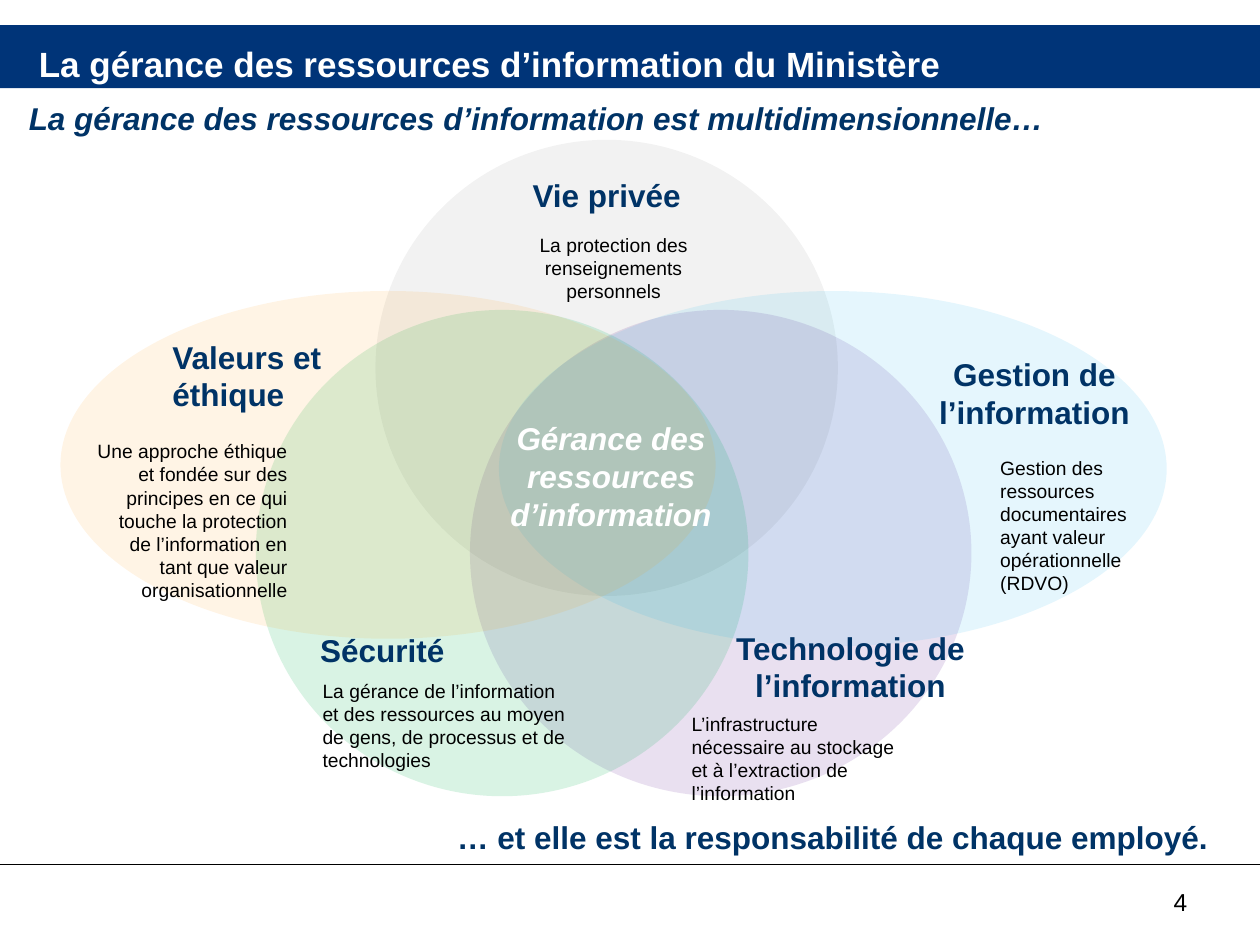
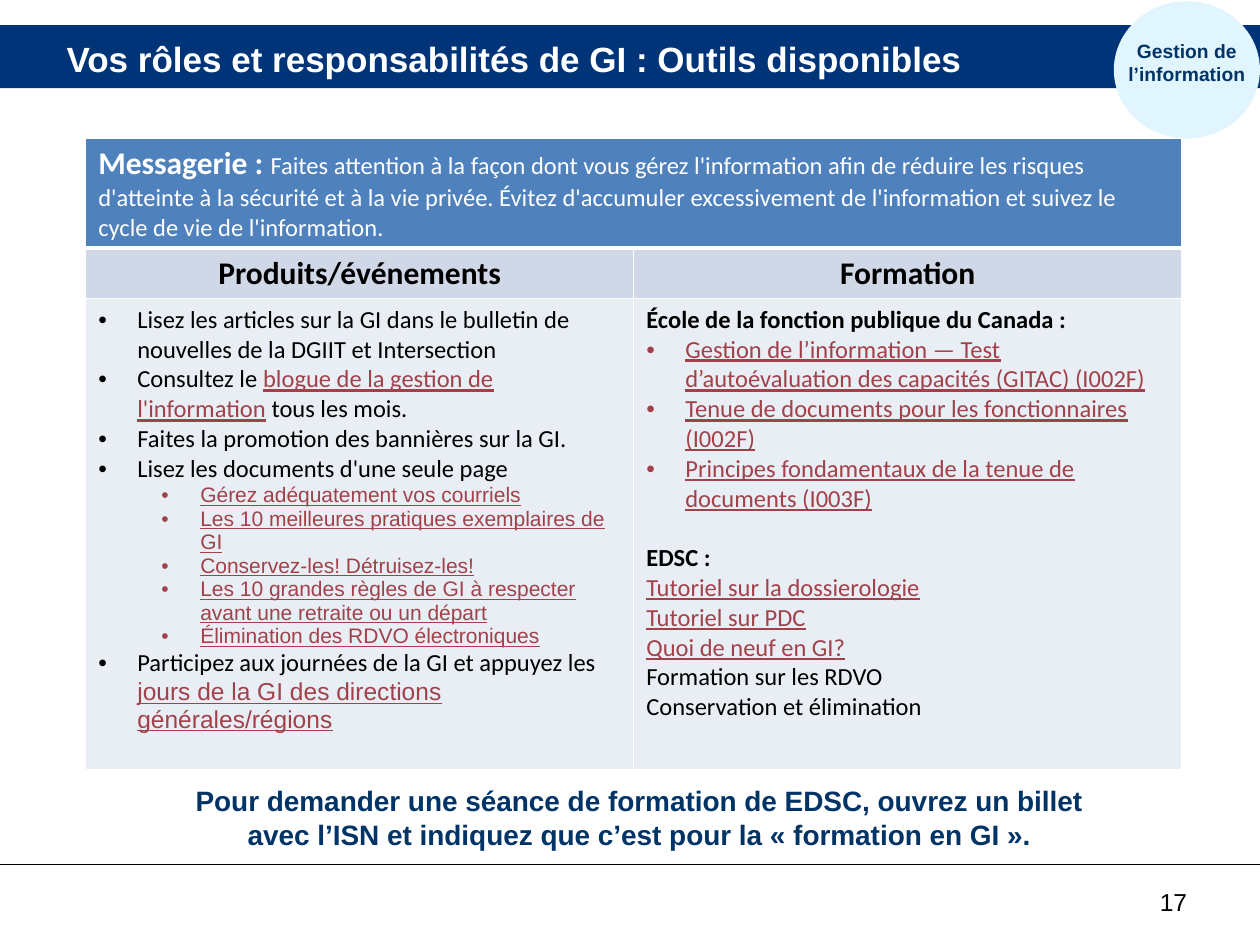
from typing import NamedTuple

from lxml import etree
from pptx import Presentation
from pptx.dml.color import RGBColor
from pptx.enum.shapes import MSO_CONNECTOR, MSO_SHAPE
from pptx.enum.text import MSO_ANCHOR, PP_ALIGN
from pptx.oxml.ns import qn
from pptx.util import Inches, Pt

LEFT, CENTER, RIGHT = PP_ALIGN.LEFT, PP_ALIGN.CENTER, PP_ALIGN.RIGHT
TOP, MIDDLE = MSO_ANCHOR.TOP, MSO_ANCHOR.MIDDLE
RECTANGLE, ELLIPSE = MSO_SHAPE.RECTANGLE, MSO_SHAPE.OVAL
STRAIGHT = MSO_CONNECTOR.STRAIGHT

COLORS = {
    "band": "003478",
    "heading": "003366",
    "white": "FFFFFF",
    "black": "000000",
    "link": "A1414A",
    "badge": "E1F5FF",
    "message": "4F81BD",
    "column_head": "D0D8E8",
    "column_body": "E9EDF4",
    "privacy": "000000",
    "technology": "7030A0",
    "security": "00B050",
    "information": "00B0F0",
    "ethics": "FF9900",
}


class Style(NamedTuple):
    size: int
    color: str = "black"
    bold: bool = False
    italic: bool = False
    underline: bool = False
    face: str = "Arial"


class Line(NamedTuple):
    runs: list
    margin: float = 0
    align: int = LEFT
    space_before: int = 0


TITLE = Style(20, "white", bold=True)
HEADING = Style(18, "heading", bold=True)
TAGLINE = HEADING._replace(italic=True)
CORE = TAGLINE._replace(color="white")
DETAIL = Style(11)
BADGE = Style(11, "heading", bold=True)
REQUEST = Style(16, "heading", bold=True)
PAGE_NUMBER = Style(14)
BODY = Style(14, face="Calibri")
BODY_BOLD = BODY._replace(bold=True)
LINK = BODY._replace(color="link", underline=True)
ARIAL_LINK = LINK._replace(face="Arial")
SUB_LINK = ARIAL_LINK._replace(size=12)
MESSAGE = BODY._replace(color="white")
MESSAGE_HEAD = MESSAGE._replace(size=18, bold=True)
COLUMN_HEAD = BODY_BOLD._replace(size=18)

BULLET, SUB_BULLET, HANGING = 0.31, 0.81, 0.31

CIRCLES = [
    ("technology", 15, 3.73, 2.46, 3.98, 3.86),
    ("privacy", 5, 2.98, 1.11, 3.67, 3.62),
    ("security", 15, 2.03, 2.46, 3.91, 3.86),
    ("information", 10, 3.96, 2.31, 5.3, 2.82),
    ("ethics", 10, 0.48, 2.31, 5.2, 2.76),
]

DIMENSIONS = [
    ("Vie privée", HEADING, CENTER, 3.81, 1.35, 2.01, 0.36),
    ("Technologie de l’information", HEADING, CENTER, 5.71, 4.94, 2.08, 0.54),
    ("Sécurité", HEADING, CENTER, 2.27, 4.96, 1.53, 0.29),
    ("Gérance des ressources d’information", CORE, CENTER, 3.83, 3.28, 2.04, 1.3),
    ("Valeurs et éthique", HEADING, LEFT, 1.27, 2.63, 2.04, 0.74),
    ("Gestion de l’information", HEADING, CENTER, 7.3, 2.77, 1.82, 0.73),
    ("Gestion des ressources documentaires ayant valeur opérationnelle (RDVO)",
     DETAIL, LEFT, 7.84, 3.57, 1.33, 1.02),
    ("L’infrastructure nécessaire au stockage et à l’extraction de l’information",
     DETAIL, LEFT, 5.39, 5.6, 1.83, 0.79),
    ("La protection des renseignements personnels",
     DETAIL, CENTER, 4.04, 1.8, 1.66, 0.63),
    ("Une approche éthique et fondée sur des principes en ce qui touche la "
     "protection de l’information en tant que valeur organisationnelle",
     DETAIL, RIGHT, 0.64, 3.44, 1.74, 1.44),
]

MESSAGE_LINES = [Line([
    ("Messagerie : ", MESSAGE_HEAD),
    ("Faites attention à la façon dont vous gérez l'information afin de réduire "
     "les risques d'atteinte à la sécurité et à la vie privée. Évitez d'accumuler "
     "excessivement de l'information et suivez le cycle de vie de l'information.",
     MESSAGE),
])]

PRODUCT_LINES = [
    Line([("Lisez les articles sur la GI dans le bulletin de nouvelles de la DGIIT "
           "et Intersection", BODY)], BULLET),
    Line([("Consultez le ", BODY), ("blogue de la gestion de l'information", LINK),
          (" tous les mois.", BODY)], BULLET),
    Line([("Faites la promotion des bannières sur la GI.", BODY)], BULLET),
    Line([("Lisez les documents d'une seule page", BODY)], BULLET),
    *[Line([(one_pager, SUB_LINK)], SUB_BULLET) for one_pager in (
        "Gérez adéquatement vos courriels",
        "Les 10 meilleures pratiques exemplaires de GI",
        "Conservez-les! Détruisez-les!",
        "Les 10 grandes règles de GI à respecter avant une retraite ou un départ",
        "Élimination des RDVO électroniques",
    )],
    Line([("Participez aux journées de la GI et appuyez les ", BODY),
          ("jours de la GI des directions générales/régions", ARIAL_LINK)], BULLET),
]

TRAINING_LINES = [
    Line([("École de la fonction publique du Canada :", BODY_BOLD)]),
    *[Line([(course, LINK)], BULLET) for course in (
        "Gestion de l’information — Test d’autoévaluation des capacités (GITAC) (I002F)",
        "Tenue de documents pour les fonctionnaires (I002F)",
        "Principes fondamentaux de la tenue de documents (I003F)",
    )],
    Line([("EDSC :", BODY_BOLD)], space_before=17),
    *[Line([(tutorial, LINK)]) for tutorial in (
        "Tutoriel sur la dossierologie", "Tutoriel sur PDC", "Quoi de neuf en GI?")],
    *[Line([(topic, BODY)]) for topic in (
        "Formation sur les RDVO", "Conservation et élimination")],
]


def rgb(name):
    return RGBColor.from_string(COLORS[name])


def apply_style(font, style):
    font.name = style.face
    font.size = Pt(style.size)
    font.bold = style.bold
    font.italic = style.italic
    font.underline = style.underline
    font.color.rgb = rgb(style.color)


def add_bullet(paragraph, margin):
    properties = paragraph._p.get_or_add_pPr()
    properties.set("marL", str(Inches(margin)))
    properties.set("indent", str(-Inches(HANGING)))
    etree.SubElement(properties, qn("a:buFont"), typeface="Arial")
    etree.SubElement(properties, qn("a:buChar"), char="•")


def write_lines(frame, lines):
    for index, line in enumerate(lines):
        paragraph = frame.add_paragraph() if index else frame.paragraphs[0]
        paragraph.alignment = line.align
        if line.space_before:
            paragraph.space_before = Pt(line.space_before)
        if line.margin:
            add_bullet(paragraph, line.margin)
        if len(line.runs) == 1:
            apply_style(paragraph.font, line.runs[0][1])
        for text, style in line.runs:
            run = paragraph.add_run()
            run.text = text
            if len(line.runs) > 1:
                apply_style(run.font, style)


def add_text(slide, text, style, align, left, top, width, height,
             anchor=TOP, wrap=True, side_inset=0.1):
    box = slide.shapes.add_textbox(
        Inches(left), Inches(top), Inches(width), Inches(height))
    frame = box.text_frame
    frame.word_wrap = wrap
    frame.vertical_anchor = anchor
    frame.margin_left = frame.margin_right = Inches(side_inset)
    write_lines(frame, [Line([(text, style)], align=align)])


def add_filled(slide, preset, color, left, top, width, height, opacity=100):
    shape = slide.shapes.add_shape(
        preset, Inches(left), Inches(top), Inches(width), Inches(height))
    shape.shadow.inherit = False
    shape.fill.solid()
    shape.fill.fore_color.rgb = rgb(color)
    shape.line.fill.background()
    if opacity < 100:
        fill_color = shape._element.spPr.find(qn("a:solidFill"))[0]
        etree.SubElement(fill_color, qn("a:alpha"), val=str(opacity * 1000))


def add_rule(slide, top):
    rule = slide.shapes.add_connector(
        STRAIGHT, Inches(0), Inches(top), Inches(10), Inches(top))
    rule.line.color.rgb = rgb("black")
    rule.line.width = Pt(0.5)
    etree.SubElement(rule._element.spPr, qn("a:effectLst"))


def add_framed_slide(deck, title, title_left, title_top, number):
    slide = deck.slides.add_slide(deck.slide_layouts[6])
    add_filled(slide, RECTANGLE, "band", 0, 0.2, 10, 0.5)
    add_text(slide, str(number), PAGE_NUMBER, RIGHT, 7.44, 6.99, 2.08, 0.29)
    add_rule(slide, 6.86)
    add_text(slide, title, TITLE, LEFT, title_left, title_top, 9.13, 0.47, MIDDLE)
    return slide


def set_borders(cell, top=1, bottom=1):
    properties = cell._tc.get_or_add_tcPr()
    widths = {"lnL": 1, "lnR": 1, "lnT": top, "lnB": bottom}
    for position, (side, points) in enumerate(widths.items()):
        border = etree.Element(qn(f"a:{side}"), w=str(Pt(points)))
        fill = etree.SubElement(border, qn("a:solidFill"))
        etree.SubElement(fill, qn("a:srgbClr"), val=COLORS["white"])
        properties.insert(position, border)


def fill_cell(cell, lines, color, top=1, bottom=1):
    cell.fill.solid()
    cell.fill.fore_color.rgb = rgb(color)
    set_borders(cell, top, bottom)
    write_lines(cell.text_frame, lines)


def add_tools_table(slide):
    table = slide.shapes.add_table(
        3, 2, Inches(0.68), Inches(1.1), Inches(8.7), Inches(5.01)).table
    table.first_row = table.horz_banding = False
    for row, height in zip(table.rows, (0.87, 0.4, 3.74)):
        row.height = Inches(height)
    table.cell(0, 0).merge(table.cell(0, 1))
    fill_cell(table.cell(0, 0), MESSAGE_LINES, "message", bottom=3)
    fill_cell(table.cell(0, 1), [], "message", bottom=3)
    columns = [("Produits/événements", PRODUCT_LINES), ("Formation", TRAINING_LINES)]
    for index, (heading, lines) in enumerate(columns):
        table.columns[index].width = Inches(4.35)
        fill_cell(table.cell(1, index), [Line([(heading, COLUMN_HEAD)], align=CENTER)],
                  "column_head", top=3)
        fill_cell(table.cell(2, index), lines, "column_body")


def build_stewardship(deck):
    slide = add_framed_slide(
        deck, "La gérance des ressources d’information du Ministère", 0.21, 0.27, 4)
    for color, opacity, *place in CIRCLES:
        add_filled(slide, ELLIPSE, color, *place, opacity=opacity)
    for dimension in DIMENSIONS:
        add_text(slide, *dimension)
    add_text(slide, "La gérance de l’information et des ressources au moyen de gens, "
             "de processus et de technologies",
             DETAIL, LEFT, 2.56, 5.34, 1.99, 0.84, side_inset=0)
    add_text(slide, "La gérance des ressources d’information est multidimensionnelle…",
             TAGLINE, LEFT, 0.13, 0.74, 8.55, 0.4, wrap=False)
    add_text(slide, "… et elle est la responsabilité de chaque employé.",
             HEADING, LEFT, 3.53, 6.44, 6.36, 0.4, wrap=False)


def build_tools(deck):
    slide = add_framed_slide(
        deck, "Vos rôles et responsabilités de GI : Outils disponibles", 0.43, 0.23, 17)
    add_text(slide, "Pour demander une séance de formation de EDSC, ouvrez un billet "
             "avec l’ISN et indiquez que c’est pour la « formation en GI ».",
             REQUEST, CENTER, 1.18, 6.17, 7.79, 0.94)
    add_filled(slide, ELLIPSE, "badge", 8.84, 0.01, 1.16, 1.09)
    add_text(slide, "Gestion de l’information", BADGE, CENTER, 8.75, 0.26, 1.34, 0.54)
    add_tools_table(slide)


def main():
    deck = Presentation()
    deck.slide_width, deck.slide_height = Inches(10), Inches(7.5)
    build_stewardship(deck)
    build_tools(deck)
    deck.save("out.pptx")


if __name__ == "__main__":
    main()
